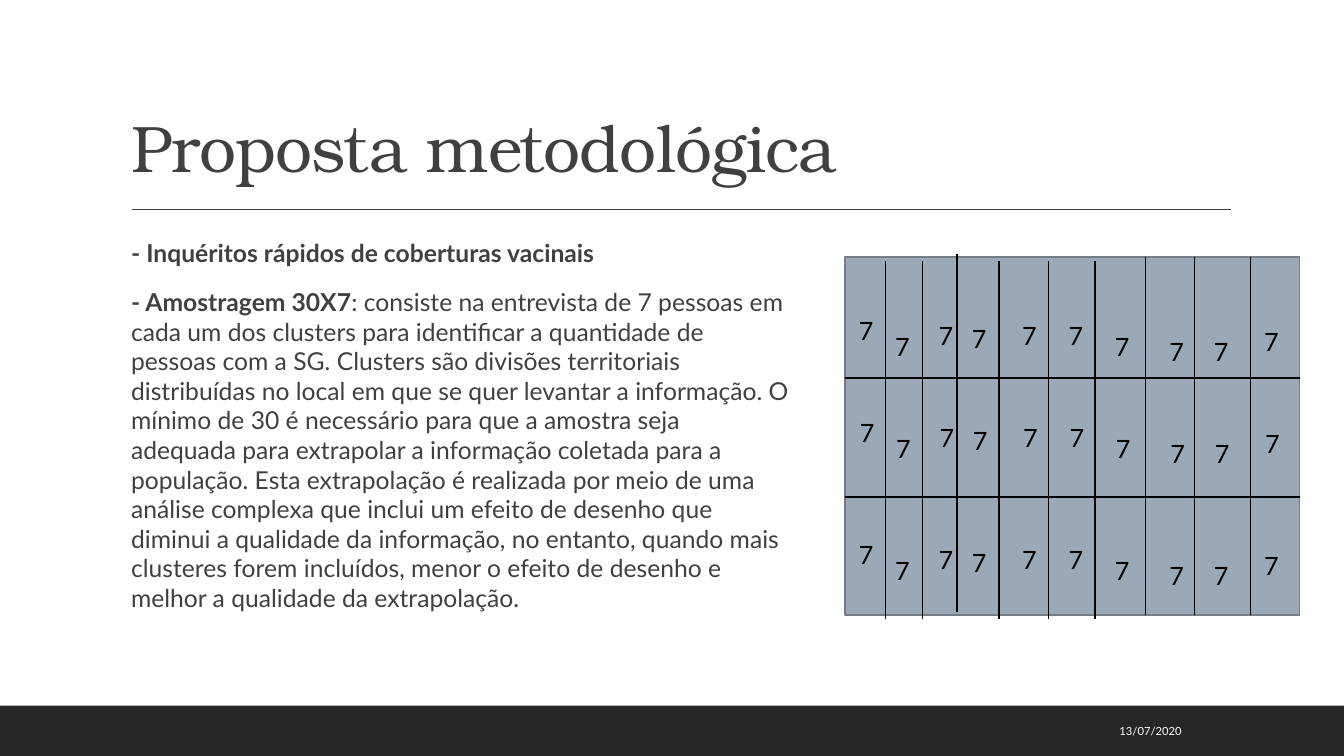
"""Build the slide on the 30X7 sampling method with its grid of clusters."""
from pptx import Presentation, util as u
from pptx.dml.color import RGBColor
from pptx.enum import shapes, text
from pptx.oxml.ns import qn
from lxml import etree

TITLE = "Proposta metodológica"
BODY = [
    [("- Inquéritos rápidos de coberturas vacinais", True)],
    [("- Amostragem 30X7", True),
     (": consiste na entrevista de 7 pessoas em cada um dos clusters para identificar "
      "a quantidade de pessoas com a SG. Clusters são divisões territoriais distribuídas "
      "no local em que se quer levantar a informação. O mínimo de 30 é necessário para que "
      "a amostra seja adequada para extrapolar a informação coletada para a população. "
      "Esta extrapolação é realizada por meio de uma análise complexa que inclui um efeito "
      "de desenho que diminui a qualidade da informação, no entanto, quando mais clusteres "
      "forem incluídos, menor o efeito de desenho e melhor a qualidade da extrapolação.",
      False)],
]
DATE = "13/07/2020"
SAMPLE = "7"

WIDTH, HEIGHT = 13.33, 7.5
GRID = (8.38, 2.55, 4.51, 3.55)
ROW_LINES = (3.75, 4.93)
COLUMN_LINES = [(8.78, 0.04), (9.15, 0.04), (9.49, -0.03), (9.91, 0.04), (10.4, 0.04),
                (10.86, 0.04), (11.36, 0), (11.85, 0), (12.4, 0)]
SAMPLES = [(8.42, 3.08), (8.78, 3.24), (9.21, 3.13), (9.54, 3.16), (10.04, 3.13),
           (10.5, 3.13), (10.96, 3.24), (11.5, 3.29), (11.94, 3.29), (12.44, 3.19)]
SAMPLE_ROWS = [(0, 0), (0.01, 1.01), (0, 2.22)]
GREY, BLACK = "404040", "000000"


def color(value):
    return RGBColor.from_string(value)


def place(item, left, top, width, height):
    item.left, item.top = u.Inches(left), u.Inches(top)
    item.width, item.height = u.Inches(width), u.Inches(height)


def write(para, words, size=18, font="Lato", ink=BLACK, bold=False):
    span = para.add_run()
    span.text = words
    span.font.size, span.font.name, span.font.bold = u.Pt(size), font, bold
    span.font.color.rgb = color(ink)
    return span


def add_box(page, left, top, width, height):
    box = page.shapes.add_textbox(*map(u.Inches, (left, top, width, height)))
    box.text_frame.word_wrap = True
    return box.text_frame


def add_rectangle(page, area, fill, edge=None):
    shape = page.shapes.add_shape(shapes.MSO_SHAPE.RECTANGLE, *map(u.Inches, area))
    shape.shadow.inherit = False
    shape.fill.solid()
    shape.fill.fore_color.rgb = color(fill)
    if edge:
        shape.line.color.rgb = color(edge)
        shape.line.width = u.Pt(1.25)
    else:
        shape.line.fill.background()


def add_line(page, x1, y1, x2, y2, ink=BLACK):
    line = page.shapes.add_connector(
        shapes.MSO_CONNECTOR.STRAIGHT, *map(u.Inches, (x1, y1, x2, y2)))
    line.line.color.rgb = color(ink)
    line.line.width = u.Pt(1)
    etree.SubElement(line._element.spPr, qn("a:effectLst"))


def add_title(page):
    title = page.shapes.title
    place(title, 1.2, 0.31, 11, 1.59)
    frame = title.text_frame
    frame.auto_size = text.MSO_AUTO_SIZE.NONE
    frame.vertical_anchor = text.MSO_ANCHOR.BOTTOM
    para = frame.paragraphs[0]
    para.alignment, para.line_spacing = text.PP_ALIGN.LEFT, 0.9
    span = write(para, TITLE, size=47, font="TeX Gyre Bonum", ink=GREY)
    span.font._element.set("spc", "-50")


def add_body(page):
    body = page.placeholders[1]
    place(body, 1.2, 2.31, 6.63, 4.11)
    frame = body.text_frame
    frame.auto_size = text.MSO_AUTO_SIZE.NONE
    frame.margin_left = frame.margin_right = 0
    for index, spans in enumerate(BODY):
        para = frame.add_paragraph() if index else frame.paragraphs[0]
        para.space_before, para.space_after = u.Pt(12), u.Pt(2)
        para.line_spacing = 1.0
        properties = para._p.get_or_add_pPr()
        properties.set("marL", str(u.Inches(0.1)))
        properties.set("indent", "0")
        etree.SubElement(properties, qn("a:buNone"))
        for words, bold in spans:
            write(para, words, size=17.6, ink=GREY, bold=bold)


def add_clusters(page):
    left, top, width, height = GRID
    add_rectangle(page, GRID, "9BA8B7", "737C87")
    for y in ROW_LINES:
        add_line(page, left, y, left + width, y)
    for x, shift in COLUMN_LINES:
        add_line(page, x, top + shift, x, top + height + shift)
    for across, down in SAMPLE_ROWS:
        for x, y in SAMPLES:
            frame = add_box(page, x + across, y + down, 0.35, 0.4)
            write(frame.paragraphs[0], SAMPLE)


def main():
    deck = Presentation()
    deck.slide_width, deck.slide_height = u.Inches(WIDTH), u.Inches(HEIGHT)
    page = deck.slides.add_slide(deck.slide_layouts[1])
    add_rectangle(page, (0, 7, WIDTH, 0.5), "262626")
    add_line(page, 1.31, 2.08, 12.21, 2.08, GREY)
    add_title(page)
    add_body(page)
    date = add_box(page, 8.99, 7.05, 2.83, 0.4)
    date.vertical_anchor = text.MSO_ANCHOR.MIDDLE
    date.paragraphs[0].alignment = text.PP_ALIGN.RIGHT
    write(date.paragraphs[0], DATE, size=8, ink="FFFFFF")
    add_clusters(page)
    deck.save("out.pptx")


if __name__ == "__main__":
    main()
